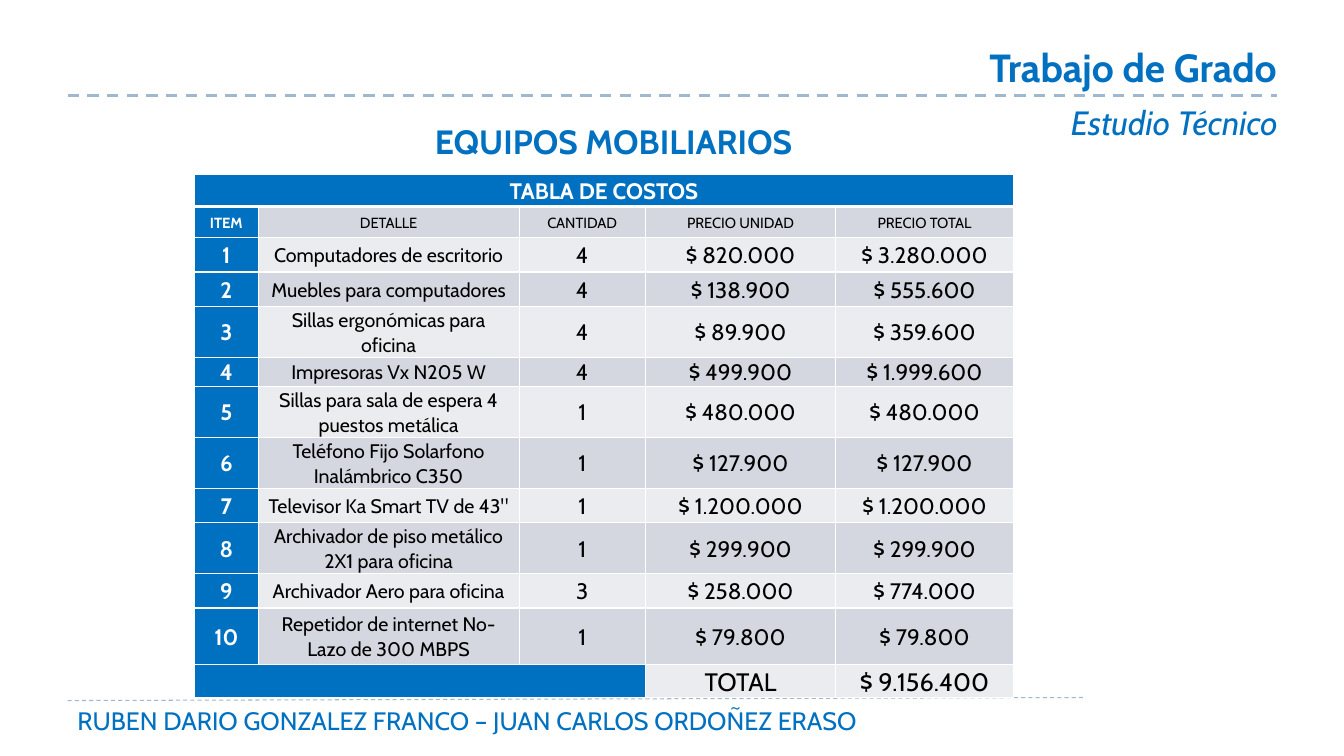
from lxml import etree
from pptx import Presentation
from pptx.dml.color import RGBColor
from pptx.enum import dml, shapes, text
from pptx.oxml import ns
from pptx.util import Inches, Pt

THEME = {
    "font": "Cabin", "blue": "0070C0", "rule": "9FB8CD", "white": "FFFFFF",
    "ink": "000000", "dark_band": "D5D7E0", "light_band": "EBECF0",
    "title": 28, "heading": 24, "total": 18, "value": 16, "detail": 14, "label": 10.5,
}

CAPTIONS = [
    ("RUBEN DARIO GONZALEZ FRANCO – JUAN CARLOS ORDOÑEZ ERASO",
     (0.67, 6.95, 9.93, 0.4), "LEFT", "total", False, False),
    ("Trabajo de Grado", (8.72, 0.38, 4.04, 0.57), "RIGHT", "title", True, False),
    ("Estudio Técnico", (9.2, 0.96, 3.57, 0.5), "RIGHT", "heading", False, True),
    ("EQUIPOS MOBILIARIOS", (1.42, 1.15, 9.33, 0.5), "CENTER", "heading", True, False),
]
RULES = [((0.67, 6.95, 10.74, 6.92), 0.75), ((0.67, 0.95, 12.67, 0.95), 2)]

COST_TITLE = "TABLA DE COSTOS"
HEADERS = ("ITEM", "DETALLE", "CANTIDAD", "PRECIO UNIDAD", "PRECIO TOTAL")
ITEMS = [
    ("Computadores de escritorio", "4", "820.000", "3.280.000"),
    ("Muebles para computadores", "4", "138.900", "555.600"),
    ("Sillas ergonómicas para oficina", "4", "89.900", "359.600"),
    ("Impresoras Vx N205 W", "4", "499.900", "1.999.600"),
    ("Sillas para sala de espera 4 puestos metálica", "1", "480.000", "480.000"),
    ("Teléfono Fijo Solarfono Inalámbrico C350", "1", "127.900", "127.900"),
    ("Televisor Ka Smart TV de 43\"", "1", "1.200.000", "1.200.000"),
    ("Archivador de piso metálico 2X1 para oficina", "1", "299.900", "299.900"),
    ("Archivador Aero para oficina", "3", "258.000", "774.000"),
    ("Repetidor de internet No-Lazo de 300 MBPS", "1", "79.800", "79.800"),
]
TOTAL = ("", "", "", "TOTAL", "$ 9.156.400")
COLUMN_WIDTHS = (0.63, 2.59, 1.25, 1.89, 1.76)
ROW_HEIGHTS = (0.32, 0.31, 0.34, 0.34, 0.5, 0.26, 0.5, 0.5, 0.34, 0.5, 0.34, 0.56, 0.29)


def color(name):
    return RGBColor.from_string(THEME[name])


def style_text(paragraph, align, size, ink, bold=False, italic=False):
    paragraph.alignment = getattr(text.PP_ALIGN, align)
    for run in paragraph.runs:
        run.font.name = THEME["font"]
        run.font.size = Pt(THEME[size])
        run.font.bold = bold
        run.font.italic = italic
        run.font.color.rgb = color(ink)


def add_caption(slide, words, box, align, size, bold, italic):
    caption = slide.shapes.add_textbox(*map(Inches, box)).text_frame
    caption.word_wrap = True
    caption.text = words
    style_text(caption.paragraphs[0], align, size, "blue", bold, italic)


def add_rule(slide, ends, width):
    rule = slide.shapes.add_connector(shapes.MSO_CONNECTOR.STRAIGHT, *map(Inches, ends))
    rule.line.color.rgb = color("rule")
    rule.line.width = Pt(width)
    rule.line.dash_style = dml.MSO_LINE.DASH
    etree.SubElement(rule._element.spPr, ns.qn("a:effectLst"))


def add_borders(cell, row):
    properties = cell._tc.get_or_add_tcPr()
    thick = {(0, "B"), (1, "T")}
    for side in "LRTB":
        width = Pt(3 if (row, side) in thick else 1)
        border = etree.SubElement(properties, ns.qn(f"a:ln{side}"), w=str(width))
        fill = etree.SubElement(border, ns.qn("a:solidFill"))
        etree.SubElement(fill, ns.qn("a:srgbClr"), val=THEME["white"])


def cell_size(row, column, last):
    if row == 1:
        return "label"
    if row == last:
        return "total"
    return "detail" if row > 1 and column == 1 else "value"


def add_costs(slide):
    rows = [(COST_TITLE, "", "", "", ""), HEADERS]
    rows += [(str(number), detail, count, f"$ {unit}", f"$ {total}")
             for number, (detail, count, unit, total) in enumerate(ITEMS, 1)]
    rows.append(TOTAL)
    last = len(rows) - 1
    costs = slide.shapes.add_table(
        len(rows), len(HEADERS), Inches(1.93), Inches(1.73),
        Inches(sum(COLUMN_WIDTHS)), Inches(sum(ROW_HEIGHTS))).table
    costs.first_row = costs.horz_banding = False
    for column, width in zip(costs.columns, COLUMN_WIDTHS):
        column.width = Inches(width)
    for line, height in zip(costs.rows, ROW_HEIGHTS):
        line.height = Inches(height)
    costs.cell(0, 0).merge(costs.cell(0, 4))
    costs.cell(last, 0).merge(costs.cell(last, 2))

    for row, entries in enumerate(rows):
        for column, entry in enumerate(entries):
            cell = costs.cell(row, column)
            accent = row == 0 or column == 0 or (row == last and column < 3)
            band = "dark_band" if row % 2 else "light_band"
            cell.margin_left = cell.margin_right = Inches(0.05)
            cell.margin_top = cell.margin_bottom = 0
            cell.vertical_anchor = text.MSO_ANCHOR.MIDDLE
            add_borders(cell, row)
            cell.fill.solid()
            cell.fill.fore_color.rgb = color("blue" if accent else band)
            if entry:
                cell.text_frame.text = entry
                paragraph = cell.text_frame.paragraphs[0]
                paragraph.line_spacing = 1.07
                style_text(paragraph, "CENTER", cell_size(row, column, last),
                           "white" if accent else "ink", accent)


def main():
    deck = Presentation()
    deck.slide_width, deck.slide_height = Inches(13.33), Inches(7.5)
    slide = deck.slides.add_slide(deck.slide_layouts[6])
    for ends, width in RULES:
        add_rule(slide, ends, width)
    add_costs(slide)
    for caption in CAPTIONS:
        add_caption(slide, *caption)
    deck.save("out.pptx")


if __name__ == "__main__":
    main()
